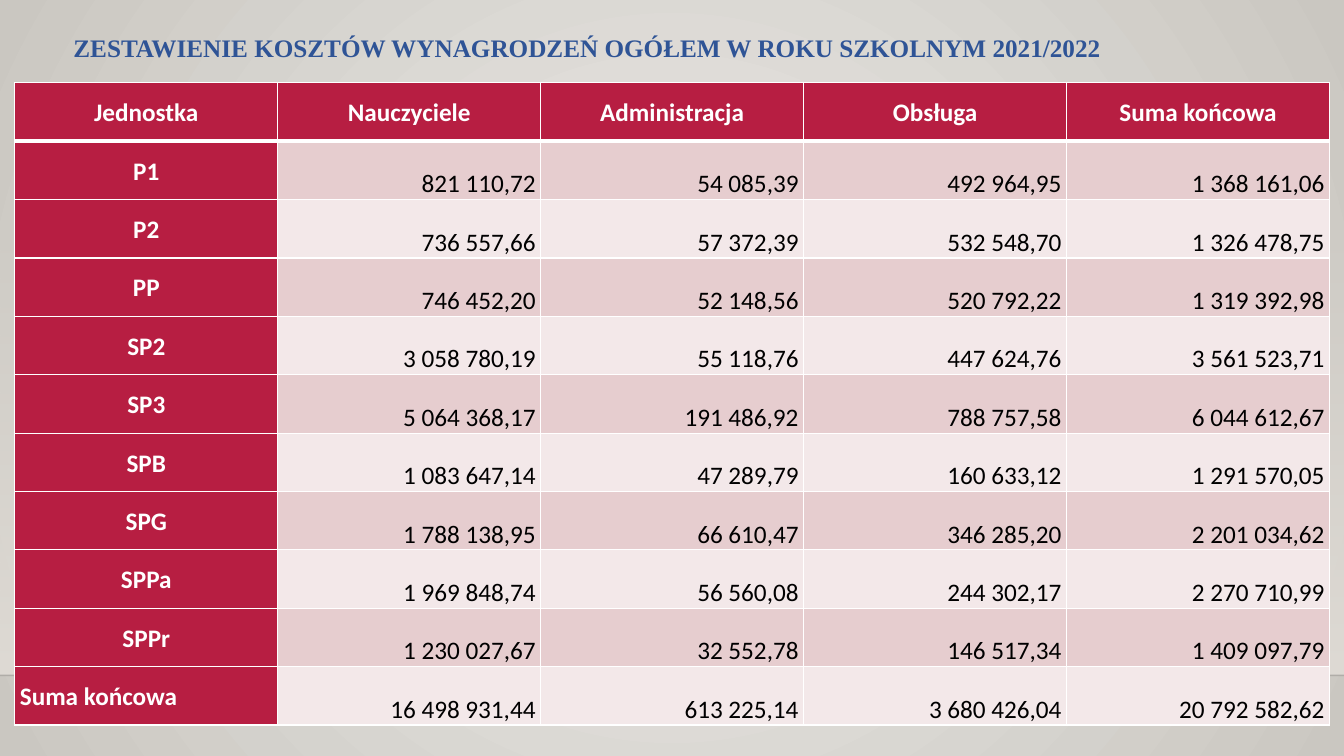
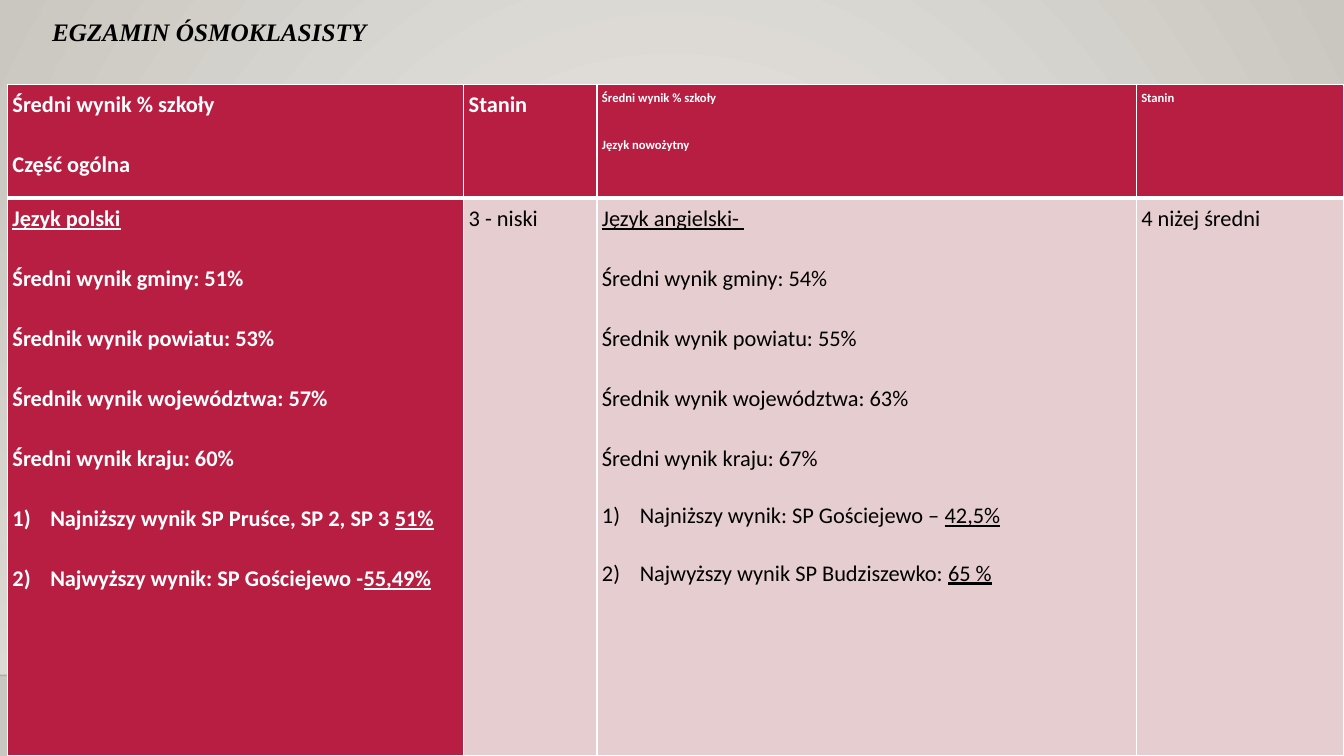
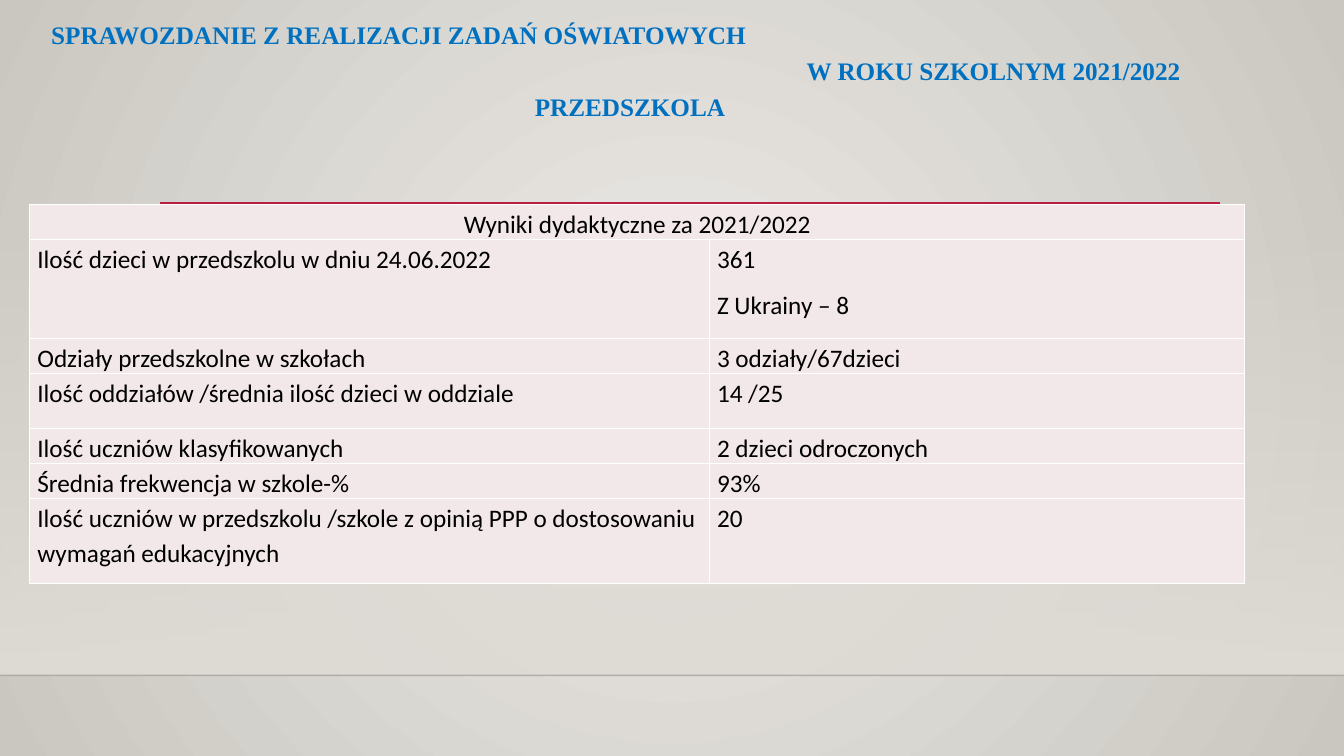
from lxml.etree import SubElement
from pptx import Presentation
from pptx.dml.color import RGBColor
from pptx.enum.shapes import MSO_CONNECTOR, MSO_SHAPE
from pptx.enum.text import MSO_ANCHOR, PP_ALIGN
from pptx.oxml.ns import qn
from pptx.util import Pt

WIDTH, HEIGHT = 960, 540
CRIMSON = RGBColor(0xB7, 0x1E, 0x42)
ROSE = RGBColor(0xE6, 0xCD, 0xCF)
PALE_ROSE = RGBColor(0xF3, 0xE8, 0xE9)
WHITE = RGBColor(0xFF, 0xFF, 0xFF)
BLACK = RGBColor(0x00, 0x00, 0x00)
NAVY = RGBColor(0x2F, 0x54, 0x96)
BLUE = RGBColor(0x00, 0x70, 0xC0)
BACKGROUND_CENTER = RGBColor(0xEC, 0xEA, 0xE7)
BACKGROUND_EDGE = RGBColor(0xCA, 0xC7, 0xC1)
BAND = RGBColor(0xDF, 0xDB, 0xD5)
TITLE_FONT, BODY_FONT = "Times New Roman", "Calibri"
THIN, HEAVY = 1, 3
FLOOR_TOP = 482.4

COST_HEADERS = ["Jednostka", "Nauczyciele", "Administracja", "Obsługa", "Suma końcowa"]
COSTS = [
    ["P1", "821 110,72", "54 085,39", "492 964,95", "1 368 161,06"],
    ["P2", "736 557,66", "57 372,39", "532 548,70", "1 326 478,75"],
    ["PP", "746 452,20", "52 148,56", "520 792,22", "1 319 392,98"],
    ["SP2", "3 058 780,19", "55 118,76", "447 624,76", "3 561 523,71"],
    ["SP3", "5 064 368,17", "191 486,92", "788 757,58", "6 044 612,67"],
    ["SPB", "1 083 647,14", "47 289,79", "160 633,12", "1 291 570,05"],
    ["SPG", "1 788 138,95", "66 610,47", "346 285,20", "2 201 034,62"],
    ["SPPa", "1 969 848,74", "56 560,08", "244 302,17", "2 270 710,99"],
    ["SPPr", "1 230 027,67", "32 552,78", "146 517,34", "1 409 097,79"],
    ["Suma końcowa", "16 498 931,44", "613 225,14", "3 680 426,04", "20 792 582,62"],
]
EXAM_HEADERS = [
    (["Średni wynik % szkoły", "Część ogólna"], 16),
    (["Stanin"], 16),
    (["Średni wynik % szkoły", "Język nowożytny"], 9),
    (["Stanin"], 9),
]
POLISH = {
    "subject": "Język polski",
    "averages": ["51%", "53%", "57%", "60%"],
    "extremes": [("Najniższy wynik SP Pruśce, SP 2, SP 3 ", "51%"),
                 ("Najwyższy wynik: SP Gościejewo -", "55,49%")],
}
ENGLISH = {
    "subject": "Język angielski- ",
    "averages": ["54%", "55%", "63%", "67%"],
    "extremes": [("Najniższy wynik: SP Gościejewo – ", "42,5%"),
                 ("Najwyższy wynik SP Budziszewko: ", "65 %")],
}
AVERAGE_LABELS = ["Średni wynik gminy: ", "Średnik wynik powiatu: ",
                  "Średnik wynik województwa: ", "Średni wynik kraju: "]
PRESCHOOL = [
    (25, "Ilość dzieci w przedszkolu w dniu 24.06.2022", ["361", "Z Ukrainy – 8"]),
    (25, "Odziały przedszkolne w szkołach", ["3 odziały/67dzieci"]),
    (39.6, "Ilość oddziałów /średnia ilość dzieci w oddziale", ["14 /25"]),
    (25, "Ilość uczniów klasyfikowanych", ["2 dzieci odroczonych"]),
    (25, "Średnia frekwencja w szkole-%", ["93%"]),
    (60.5, "Ilość uczniów w przedszkolu /szkole z opinią PPP o dostosowaniu "
           "wymagań edukacyjnych", ["20"]),
]
PRESCHOOL_COUNT_HEIGHT = 70.6


def write_text(frame, text, *, underlined_tail="", size=18, color=BLACK, font=BODY_FONT,
               bold=False, italic=False, underline=False, align=PP_ALIGN.LEFT,
               line_spacing=1.07, before=0, after=8, left_indent=0, numbered=False):
    is_first = not frame.paragraphs[0].runs
    paragraph = frame.paragraphs[0] if is_first else frame.add_paragraph()
    paragraph.alignment = align
    paragraph.line_spacing = line_spacing
    paragraph.space_before = Pt(0 if is_first else before)
    paragraph.space_after = Pt(after)
    properties = paragraph._p.get_or_add_pPr()
    if numbered:
        properties.set("marL", str(Pt(27)))
        properties.set("indent", str(Pt(-27)))
        SubElement(properties, qn("a:buAutoNum"), type="arabicParenR")
    elif left_indent:
        properties.set("marL", str(Pt(left_indent)))
    for part, is_underlined in ((text, underline), (underlined_tail, True)):
        if part:
            run = paragraph.add_run()
            run.text = part
            run.font.name = font
            run.font.size = Pt(size)
            run.font.bold = bold
            run.font.italic = italic
            run.font.underline = is_underlined
            run.font.color.rgb = color


def set_alpha(color_parent, percent):
    color = next(color_parent.iter(qn("a:srgbClr")))
    SubElement(color, qn("a:alpha"), val=str(percent * 1000))


def set_gradient(fill, first, last):
    fill.gradient()
    for stop, color in zip(fill.gradient_stops, (first, last)):
        stop.color.rgb = color


def set_background(master):
    fill = master.background.fill
    set_gradient(fill, BACKGROUND_CENTER, BACKGROUND_EDGE)
    gradient = next(master._element.cSld.iter(qn("a:gradFill")))
    gradient.remove(gradient.find(qn("a:lin")))
    circle = SubElement(gradient, qn("a:path"), path="circle")
    SubElement(circle, qn("a:fillToRect"), l="50000", t="50000", r="50000", b="50000")


def add_rule(slide, left, right, top, color, width):
    rule = slide.shapes.add_connector(MSO_CONNECTOR.STRAIGHT, Pt(left), Pt(top), Pt(right), Pt(top))
    rule.line.color.rgb = color
    rule.line.width = Pt(width)
    SubElement(rule._element.spPr, qn("a:effectLst"))
    return rule


def add_slide(presentation):
    slide = presentation.slides.add_slide(presentation.slide_layouts[6])
    band_top = 159.1
    band = slide.shapes.add_shape(MSO_SHAPE.RECTANGLE, 0, Pt(band_top),
                                  Pt(WIDTH), Pt(FLOOR_TOP - band_top))
    band.shadow.inherit = False
    band.line.fill.background()
    set_gradient(band.fill, BAND, BAND)
    band.fill.gradient_angle = 270
    set_alpha(band._element.spPr, 0)
    floor = add_rule(slide, 0, WIDTH, FLOOR_TOP, BLACK, 1)
    set_alpha(floor._element.spPr, 20)
    add_rule(slide, 114.5, 871.2, 145.4, CRIMSON, 2.5)
    return slide


def add_title(slide, left, top, width, height, lines, **style):
    box = slide.shapes.add_textbox(Pt(left), Pt(top), Pt(width), Pt(height))
    box.text_frame.word_wrap = True
    for text, placement in lines:
        write_text(box.text_frame, text, font=TITLE_FONT, bold=True, after=0,
                   **style, **placement)


def add_table(slide, left, top, columns, rows, has_header=True):
    frame = slide.shapes.add_table(len(rows), len(columns), Pt(left), Pt(top),
                                   Pt(sum(columns)), Pt(sum(rows)))
    table = frame.table
    table.first_row = has_header
    table.horz_banding = False
    for column, width in zip(table.columns, columns):
        column.width = Pt(width)
    for row, height in zip(table.rows, rows):
        row.height = Pt(height)
    return table


def style_cell(cell, fill, *, horizontal=3.6, vertical=0, anchor=MSO_ANCHOR.TOP,
               top_border=THIN, bottom_border=THIN):
    cell.margin_left = cell.margin_right = Pt(horizontal)
    cell.margin_top = cell.margin_bottom = Pt(vertical)
    cell.vertical_anchor = anchor
    properties = cell._tc.get_or_add_tcPr()
    borders = {"a:lnL": THIN, "a:lnR": THIN, "a:lnT": top_border, "a:lnB": bottom_border}
    for tag, width in borders.items():
        border = SubElement(properties, qn(tag), w=str(Pt(width)))
        solid = SubElement(border, qn("a:solidFill"))
        SubElement(solid, qn("a:srgbClr"), val=str(WHITE))
    cell.fill.solid()
    cell.fill.fore_color.rgb = fill
    return cell.text_frame


def build_costs(presentation):
    slide = add_slide(presentation)
    title = "ZESTAWIENIE KOSZTÓW WYNAGRODZEŃ OGÓŁEM W ROKU SZKOLNYM 2021/2022"
    add_title(slide, 45.4, 22.3, 859, 89.3, [(title, {})], color=NAVY, line_spacing=0.9)
    records = [COST_HEADERS] + COSTS
    table = add_table(slide, 10.6, 59.2, [187.85] * len(COST_HEADERS), [41.7] * len(records))
    for row, record in enumerate(records):
        for column, text in enumerate(record):
            is_label = row == 0 or column == 0
            is_total_label = row == len(records) - 1 and column == 0
            fill = CRIMSON if is_label else ROSE if row % 2 else PALE_ROSE
            frame = style_cell(table.cell(row, column), fill,
                               anchor=MSO_ANCHOR.MIDDLE if is_label else MSO_ANCHOR.BOTTOM,
                               top_border=HEAVY if row == 1 else THIN,
                               bottom_border=HEAVY if row == 0 else THIN)
            align = PP_ALIGN.CENTER if is_label else PP_ALIGN.RIGHT
            write_text(frame, text, bold=is_label, color=WHITE if is_label else BLACK,
                       align=PP_ALIGN.LEFT if is_total_label else align)


def write_results(frame, results, *, closing_after, **style):
    write_text(frame, results["subject"], underline=True, **style)
    for label, average in zip(AVERAGE_LABELS, results["averages"]):
        after = closing_after if label == AVERAGE_LABELS[-1] else 8
        write_text(frame, label + average, before=14, after=after, **style)
    for text, score in results["extremes"]:
        write_text(frame, text, underlined_tail=score, before=14, after=closing_after,
                   numbered=True, **style)


def build_exam(presentation):
    slide = add_slide(presentation)
    add_title(slide, 30.2, 10.8, 836, 101.5, [("EGZAMIN ÓSMOKLASISTY", {})],
              italic=True, line_spacing=0.9)
    table = add_table(slide, 5.3, 60.3, [325.9, 95.2, 385.2, 148.4], [81.1, 398.6])
    for column, (lines, size) in enumerate(EXAM_HEADERS):
        frame = style_cell(table.cell(0, column), CRIMSON, vertical=3.6, bottom_border=HEAVY)
        for line in lines:
            write_text(frame, line, size=size, color=WHITE, bold=True, before=14)
    fills = [CRIMSON, ROSE, ROSE, ROSE]
    frames = [style_cell(table.cell(1, column), fill, vertical=3.6, top_border=HEAVY)
              for column, fill in enumerate(fills)]
    write_results(frames[0], POLISH, closing_after=8, size=16, color=WHITE, bold=True)
    write_text(frames[1], "3 - niski", size=16)
    write_results(frames[2], ENGLISH, closing_after=6, size=16)
    write_text(frames[3], "4 niżej średni", size=16)


def build_preschool(presentation):
    slide = add_slide(presentation)
    lines = [
        ("SPRAWOZDANIE Z REALIZACJI ZADAŃ OŚWIATOWYCH", {}),
        ("W ROKU SZKOLNYM 2021/2022", {"left_indent": 539.5}),
        ("PRZEDSZKOLA", {"align": PP_ALIGN.CENTER}),
    ]
    add_title(slide, 29.5, 6.5, 841, 139.7, lines, color=BLUE, line_spacing=1.19)
    heights = [25, PRESCHOOL_COUNT_HEIGHT] + [height for height, _, _ in PRESCHOOL[1:]]
    table = add_table(slide, 21.3, 146.2, [485.5, 382.3], heights, has_header=False)
    for row in table.rows:
        for cell in row.cells:
            style_cell(cell, PALE_ROSE, horizontal=5.4)
    heading = table.cell(0, 0)
    heading.merge(table.cell(0, 1))
    write_text(heading.text_frame, "Wyniki dydaktyczne za 2021/2022",
               align=PP_ALIGN.CENTER, line_spacing=1.15)
    for row, (_, label, values) in enumerate(PRESCHOOL, start=1):
        write_text(table.cell(row, 0).text_frame, label, line_spacing=1.15)
        for value in values:
            write_text(table.cell(row, 1).text_frame, value, line_spacing=1.15)


def main():
    presentation = Presentation()
    presentation.slide_width = Pt(WIDTH)
    presentation.slide_height = Pt(HEIGHT)
    set_background(presentation.slide_master)
    build_costs(presentation)
    build_exam(presentation)
    build_preschool(presentation)
    presentation.save("out.pptx")


if __name__ == "__main__":
    main()
